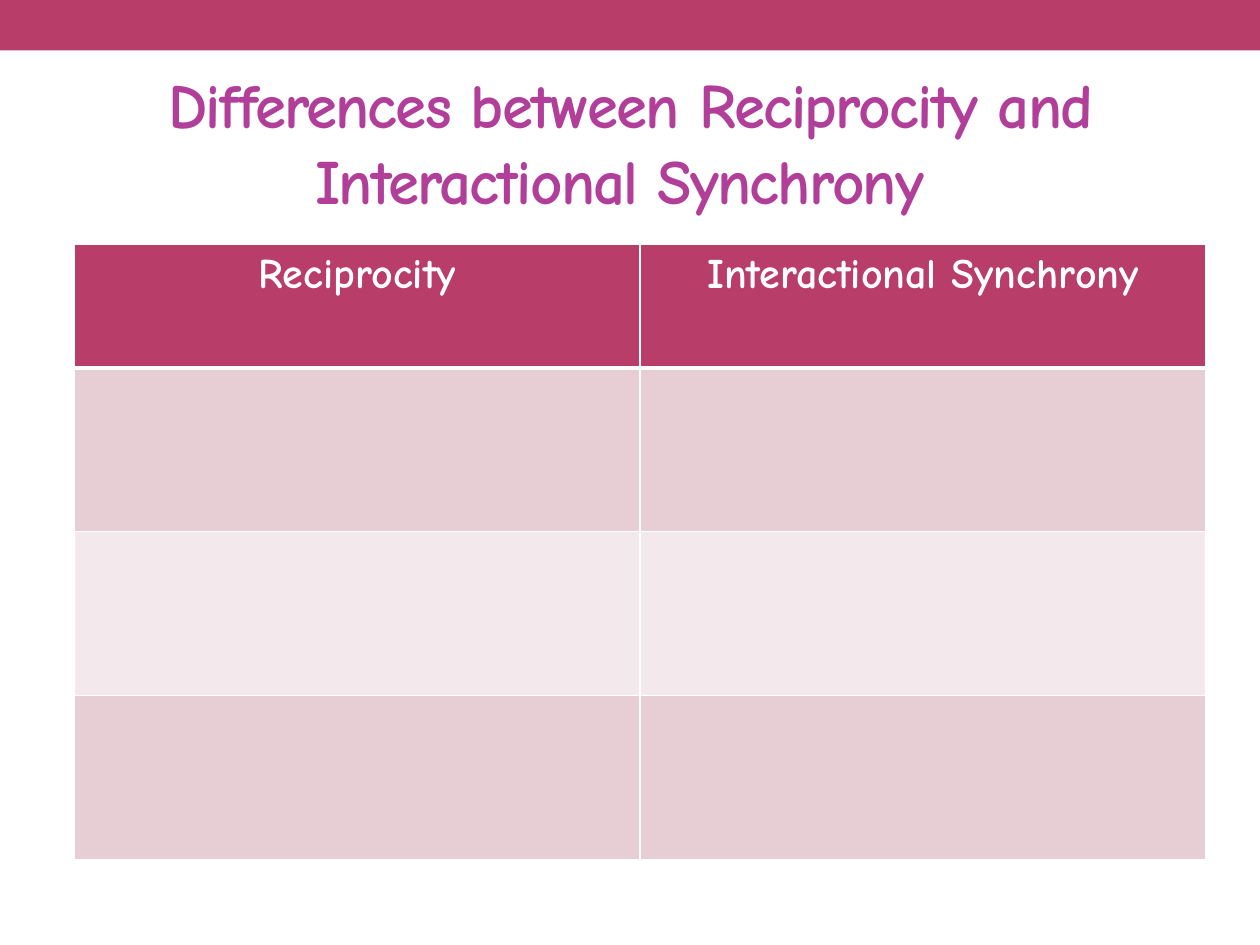
from dataclasses import dataclass

import pptx
import pptx.dml.color
import pptx.enum.shapes
import pptx.enum.text
import pptx.oxml
import pptx.oxml.ns
import pptx.util
from pptx.util import Inches

Color = pptx.dml.color.RGBColor
Align = pptx.enum.text.PP_ALIGN


@dataclass(frozen=True)
class Theme:
    font: str = "Comic Neue"
    title_size: float = 36
    header_size: float = 24
    title: str = "B13F9A"
    accent: str = "B83D68"
    bands: tuple[str, str] = ("E6CED4", "F3E8EB")
    white: str = "FFFFFF"
    thin: float = 1
    thick: float = 3


@dataclass(frozen=True)
class Row:
    height: float
    fill: str
    bottom_width: float
    texts: tuple[str, str] = ("", "")


THEME = Theme()


def style_text(paragraph, size: float, color: str) -> None:
    paragraph.alignment = Align.CENTER
    for run in paragraph.runs:
        run.font.name = THEME.font
        run.font.size = pptx.util.Pt(size)
        run.font.bold = True
        run.font.color.rgb = Color.from_string(color)


def set_borders(cell, bottom_width: float) -> None:
    properties = cell._tc.get_or_add_tcPr()
    widths = {"L": THEME.thin, "R": THEME.thin, "T": THEME.thin, "B": bottom_width}
    for index, (side, width) in enumerate(widths.items()):
        properties.insert(index, pptx.oxml.parse_xml(
            f'<a:ln{side} {pptx.oxml.ns.nsdecls("a")} w="{pptx.util.Pt(width)}">'
            f'<a:solidFill><a:srgbClr val="{THEME.white}"/></a:solidFill></a:ln{side}>'
        ))


def add_banner(slide) -> None:
    banner = slide.shapes.add_shape(
        pptx.enum.shapes.MSO_SHAPE.RECTANGLE, 0, 0, Inches(10), Inches(0.4))
    banner.shadow.inherit = False
    banner.fill.solid()
    banner.fill.fore_color.rgb = Color.from_string(THEME.accent)
    banner.line.fill.background()


def fill_title(slide, text: str) -> None:
    title = slide.shapes.title
    title.left, title.top = Inches(0.5), Inches(0.58)
    title.width, title.height = Inches(9), Inches(1.08)
    frame = title.text_frame
    frame.text = text
    frame.auto_size = pptx.enum.text.MSO_AUTO_SIZE.NONE
    frame.vertical_anchor = pptx.enum.text.MSO_ANCHOR.MIDDLE
    style_text(frame.paragraphs[0], THEME.title_size, THEME.title)
    for run in frame.paragraphs[0].runs:
        run.font._element.set("spc", "-100")


def add_comparison(slide, rows: list[Row]) -> None:
    total_height = sum(row.height for row in rows)
    comparison = slide.shapes.add_table(
        len(rows), 2, Inches(0.59), Inches(1.94), Inches(8.98), Inches(total_height)
    ).table
    for row_index, row in enumerate(rows):
        comparison.rows[row_index].height = Inches(row.height)
        for column_index, text in enumerate(row.texts):
            cell = comparison.cell(row_index, column_index)
            cell.fill.solid()
            cell.fill.fore_color.rgb = Color.from_string(row.fill)
            set_borders(cell, row.bottom_width)
            if text:
                cell.text_frame.text = text
                style_text(cell.text_frame.paragraphs[0], THEME.header_size, THEME.white)


def main() -> None:
    presentation = pptx.Presentation()
    presentation.slide_width, presentation.slide_height = Inches(10), Inches(7.5)
    slide = presentation.slides.add_slide(presentation.slide_layouts.get_by_name("Title Only"))
    add_banner(slide)
    fill_title(slide, "Differences between Reciprocity and Interactional Synchrony ")
    header = Row(0.98, THEME.accent, THEME.thick, ("Reciprocity", "Interactional Synchrony"))
    body = [Row(1.3, THEME.bands[index % 2], THEME.thin) for index in range(3)]
    add_comparison(slide, [header, *body])
    presentation.save("out.pptx")


if __name__ == "__main__":
    main()
